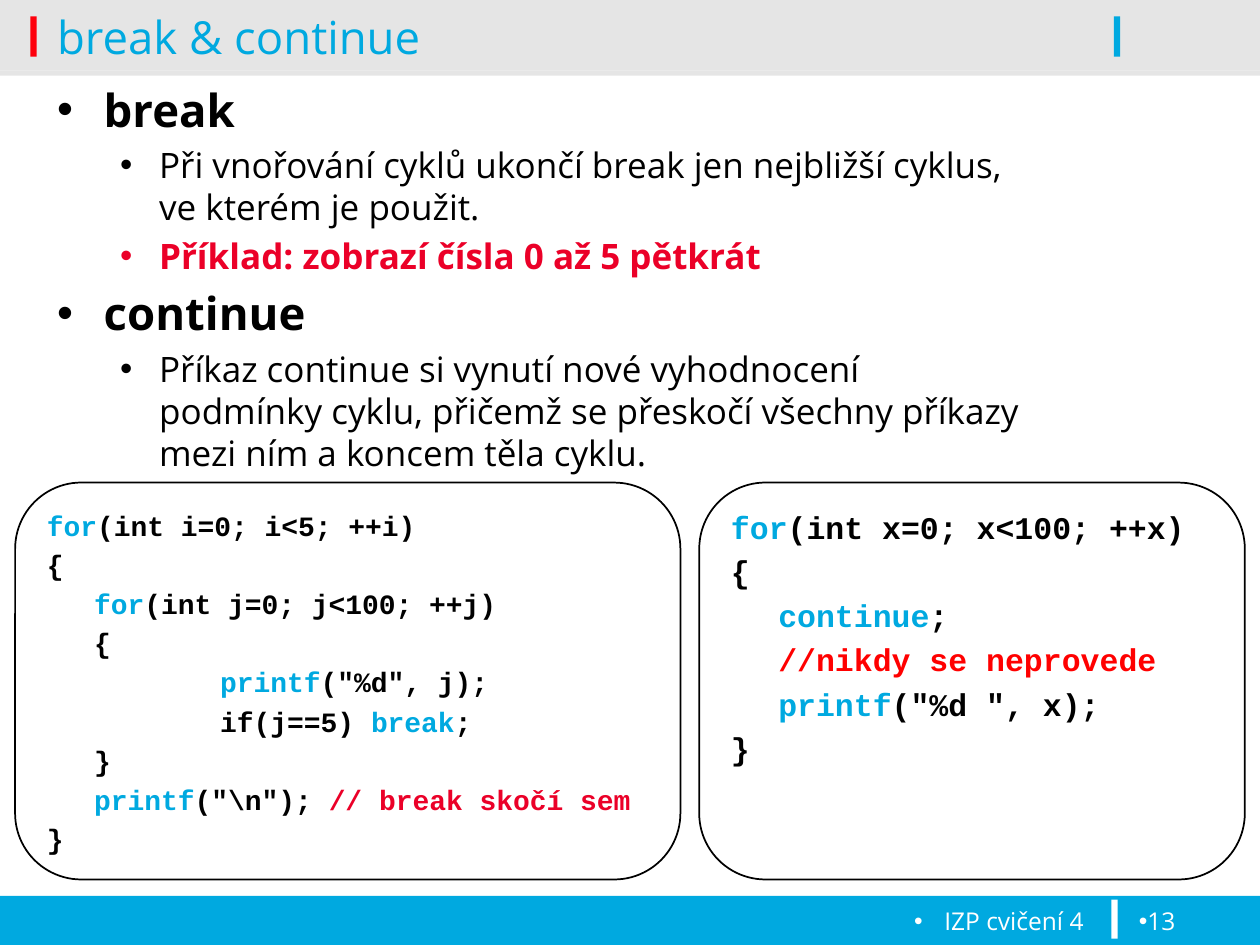
from dataclasses import dataclass

from lxml import etree
from pptx import Presentation
from pptx import util as u
from pptx.dml.color import RGBColor
from pptx.enum import shapes, text
from pptx.oxml import ns

COLUMNS, ROWS = 100, 75


@dataclass(frozen=True)
class Theme:
    sans: str = "Open Sans"
    mono: str = "Courier New"
    blue: str = "00A9E0"
    red: str = "EB0028"
    bright_red: str = "FF0000"
    marker_red: str = "FE000C"
    band: str = "E5E5E5"
    black: str = "000000"
    white: str = "FFFFFF"
    heading: int = 26
    body: int = 20
    footer: int = 14
    code_large: int = 18
    code_small: int = 16
    gap: float = 0.2


THEME = Theme()


def write_text(paragraph, content, font=THEME.sans, size=THEME.body,
               color=THEME.black, bold=False):
    for index, line in enumerate(content.split("\n")):
        if index:
            paragraph.add_line_break()
        run = paragraph.add_run()
        run.text = line
        run.font.name = font
        run.font.size = u.Pt(size)
        run.font.bold = bold
        run.font.color.rgb = RGBColor.from_string(color)


def set_indent(paragraph, margin, hanging, bullet=None):
    properties = paragraph._p.get_or_add_pPr()
    properties.set("marL", str(u.Inches(margin)))
    properties.set("indent", str(-u.Inches(hanging)))
    properties.set("defTabSz", str(u.Inches(1)))
    if bullet:
        etree.SubElement(properties, ns.qn("a:buFont")).set("typeface", "Arial")
        etree.SubElement(properties, ns.qn("a:buChar")).set("char", bullet)


class SlideBuilder:
    def __init__(self, presentation, theme):
        self.theme = theme
        self.slide = presentation.slides.add_slide(presentation.slide_layouts[6])
        self.column = presentation.slide_width / COLUMNS
        self.row = presentation.slide_height / ROWS

    def place(self, left, top, width, height):
        return (round(left * self.column), round(top * self.row),
                round(width * self.column), round(height * self.row))

    def shape(self, kind, area, fill, line=None):
        shape = self.slide.shapes.add_shape(kind, *self.place(*area))
        shape.shadow.inherit = False
        shape.fill.solid()
        shape.fill.fore_color.rgb = RGBColor.from_string(fill)
        if line:
            shape.line.color.rgb = RGBColor.from_string(line)
            shape.line.width = u.Pt(1)
        else:
            shape.line.fill.background()
        return shape

    def bar(self, area, fill):
        return self.shape(shapes.MSO_SHAPE.RECTANGLE, area, fill)

    def text_box(self, area, anchor=text.MSO_ANCHOR.TOP):
        frame = self.slide.shapes.add_textbox(*self.place(*area)).text_frame
        frame.word_wrap = True
        frame.vertical_anchor = anchor
        return frame

    def title(self, area, content):
        frame = self.text_box(area, text.MSO_ANCHOR.MIDDLE)
        write_text(frame.paragraphs[0], content, size=self.theme.heading,
                   color=self.theme.blue)

    def outline(self, area, items):
        frame = self.text_box(area)
        for index, (level, content, color, bold) in enumerate(items):
            paragraph = frame.paragraphs[0] if index == 0 else frame.add_paragraph()
            paragraph.level = level
            margin, hanging = ((0.37, 0.37), (0.81, 0.31))[level]
            size = (self.theme.heading, self.theme.body)[level]
            set_indent(paragraph, margin, hanging, "•")
            if index:
                paragraph.space_before = u.Pt(size * self.theme.gap)
            write_text(paragraph, content, size=size, color=color, bold=bold)

    def footer(self, area, content, alignment, hanging):
        paragraph = self.text_box(area).paragraphs[0]
        paragraph.alignment = alignment
        set_indent(paragraph, hanging, hanging, "•")
        write_text(paragraph, content, size=self.theme.footer,
                   color=self.theme.white)

    def code(self, area, lines, size):
        panel = self.shape(shapes.MSO_SHAPE.ROUNDED_RECTANGLE, area,
                           self.theme.white, self.theme.black)
        frame = panel.text_frame
        frame.word_wrap = True
        frame.vertical_anchor = text.MSO_ANCHOR.TOP
        for index, line in enumerate(lines):
            paragraph = frame.paragraphs[0] if index == 0 else frame.add_paragraph()
            paragraph.alignment = text.PP_ALIGN.LEFT
            set_indent(paragraph, 0.375, 0.375)
            if index:
                paragraph.space_before = u.Pt(size * self.theme.gap)
            for content, color in line:
                write_text(paragraph, content, font=self.theme.mono, size=size,
                           color=color, bold=True)


def main():
    presentation = Presentation()
    presentation.slide_width = u.Inches(10)
    presentation.slide_height = u.Inches(7.5)
    builder = SlideBuilder(presentation, THEME)
    black, blue, red = THEME.black, THEME.blue, THEME.red

    builder.bar((0, 71.1, COLUMNS, 3.9), blue)
    builder.bar((0, 5.6, COLUMNS, 0.4), THEME.band)
    builder.bar((0, 0, COLUMNS, 5.6), THEME.band)
    builder.bar((2.4, 1.3, 0.5, 3.2), THEME.marker_red)
    builder.bar((88.2, 71.4, 0.5, 3.1), THEME.white)
    builder.bar((88.4, 1.3, 0.5, 3.2), blue)

    builder.title((3.55, -1.1, 84.2, 7.9), "break & continue")
    builder.outline((3.55, 6, 95.3, 64.6), [
        (0, "break", black, True),
        (1, "Při vnořování cyklů ukončí break jen nejbližší cyklus,\n"
            "ve kterém je použit.", black, False),
        (1, "Příklad: zobrazí čísla 0 až 5 pětkrát", red, True),
        (0, "continue", black, True),
        (1, "Příkaz continue si vynutí nové vyhodnocení\n"
            "podmínky cyklu, přičemž se přeskočí všechny příkazy\n"
            "mezi ním a koncem těla cyklu.", black, False),
    ])
    builder.footer((1.2, 71.4, 85.8, 3.6), "IZP cvičení 4",
                   text.PP_ALIGN.RIGHT, 0.24)
    builder.footer((89.4, 71.4, 9, 3.6), "13", text.PP_ALIGN.LEFT, 0)

    builder.code((55.5, 38.3, 43.3, 31.5), [
        [("for", blue), ("(int x=0; x<100; ++x)", black)],
        [("{", black)],
        [("\t", black), ("continue", blue), (";", black)],
        [("\t//nikdy se neprovede", THEME.bright_red)],
        [("\t", black), ("printf", blue), ('("%d ", x);', black)],
        [("}", black)],
    ], THEME.code_large)
    builder.code((1.2, 38.3, 52.8, 31.5), [
        [("for", blue), ("(int i=0; i<5; ++i)", black)],
        [("{", black)],
        [("\t", black), ("for", blue), ("(int j=0; j<100; ++j)", black)],
        [("\t{", black)],
        [("\t\t", black), ("printf", blue), ('("%d", j);', black)],
        [("\t\tif(j==5) ", black), ("break", blue), (";", black)],
        [("\t}", black)],
        [("\t", black), ("printf", blue), ('("\\n"); ', black),
         ("// break skočí sem", red)],
        [("}", black)],
    ], THEME.code_small)

    presentation.save("out.pptx")


if __name__ == "__main__":
    main()
